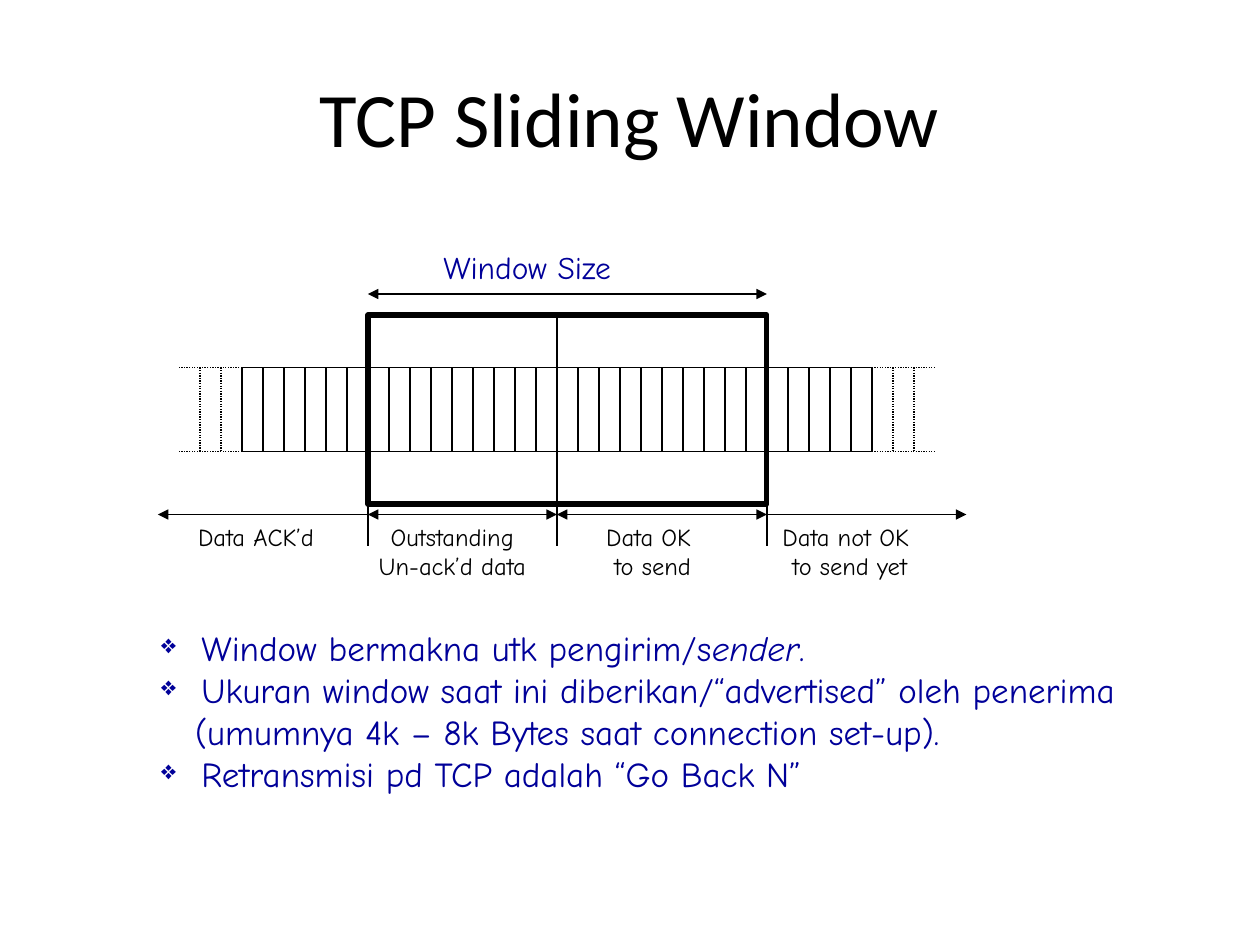
from lxml.etree import SubElement
from pptx import Presentation
from pptx.dml.color import RGBColor
from pptx.enum.dml import MSO_LINE
from pptx.enum.shapes import MSO_CONNECTOR, MSO_SHAPE
from pptx.enum.text import MSO_ANCHOR, MSO_AUTO_SIZE, PP_ALIGN
from pptx.oxml.ns import qn
from pptx.util import Inches, Pt

COLORS = {"black": "000000", "blue": "000099"}
CELL = 1 / 6
LEFT, TOP = 1.92, 2.5
CELLS = 30
WIN_START, WIN_SPLIT, WIN_END = 6, 15, 25
WIN_ROWS = 9
BAND = (2.5, 6.5)
ARROW_ROW = 9.5


def color(name):
    return RGBColor.from_string(COLORS[name])


def x(col):
    return Inches(LEFT + col * CELL)


def y(row):
    return Inches(TOP + row * CELL)


def add_line(s, start, end, dotted=False, head=False, tail=False):
    c = s.shapes.add_connector(MSO_CONNECTOR.STRAIGHT, x(start[0]), y(start[1]), x(end[0]), y(end[1]))
    c.line.color.rgb = color("black")
    c.line.width = Pt(0.75)
    if dotted:
        c.line.dash_style = MSO_LINE.ROUND_DOT
    ln = c.line._get_or_add_ln()
    for tag, wanted in (("a:headEnd", head), ("a:tailEnd", tail)):
        if wanted:
            SubElement(ln, qn(tag), type="triangle")
    SubElement(c._element.spPr, qn("a:effectLst"))


def set_bullet(p, indent, char=None):
    pPr = p._p.get_or_add_pPr()
    pPr.set("marL", str(Inches(indent)))
    if char:
        pPr.set("indent", str(-Inches(indent)))
        SubElement(pPr, qn("a:buSzPct"), val="75000")
        SubElement(pPr, qn("a:buChar"), char=char)


def add_text(s, box, paragraphs, size=14, font="Comic Neue", fill="black",
             align=PP_ALIGN.CENTER, anchor=MSO_ANCHOR.TOP, wrap=False):
    tf = s.shapes.add_textbox(*map(Inches, box)).text_frame
    tf.word_wrap = wrap
    tf.auto_size = MSO_AUTO_SIZE.NONE if wrap else MSO_AUTO_SIZE.SHAPE_TO_FIT_TEXT
    tf.vertical_anchor = anchor
    for i, runs in enumerate(paragraphs):
        p = tf.paragraphs[0] if i == 0 else tf.add_paragraph()
        p.alignment = align
        for text, italic in [(runs, False)] if isinstance(runs, str) else runs:
            r = p.add_run()
            r.text = text
            r.font.size = Pt(size)
            r.font.name = font
            r.font.italic = italic
            r.font.color.rgb = color(fill)
    return tf


def add_cells(s):
    top, bottom = BAND
    for row in BAND:
        add_line(s, (0, row), (CELLS, row))
        add_line(s, (CELLS, row), (CELLS + 3, row), dotted=True)
        add_line(s, (0, row), (-3, row), dotted=True)
    for col in range(-2, CELLS + 3):
        add_line(s, (col, top), (col, bottom), dotted=not 0 <= col <= CELLS)


def add_window(s):
    sp = s.shapes.add_shape(MSO_SHAPE.RECTANGLE, x(WIN_START), y(0),
                            x(WIN_END) - x(WIN_START), y(WIN_ROWS) - y(0))
    sp.shadow.inherit = False
    sp.fill.background()
    sp.line.color.rgb = color("black")
    sp.line.width = Pt(3)
    add_line(s, (WIN_SPLIT, 0), (WIN_SPLIT, WIN_ROWS))
    add_line(s, (WIN_START, -1), (WIN_END, -1), head=True, tail=True)


def add_ranges(s):
    for start, end, head in ((WIN_START, -4, False), (WIN_END, 34.5, False),
                             (WIN_START, WIN_SPLIT, True), (WIN_SPLIT, WIN_END, True)):
        add_line(s, (start, ARROW_ROW), (end, ARROW_ROW), head=head, tail=True)
    for col in (WIN_START, WIN_SPLIT, WIN_END):
        add_line(s, (col, WIN_ROWS), (col, WIN_ROWS + 2))
    for left, width, lines in (
        (1.43, 1.27, ["Data ACK’d "]),
        (2.87, 1.44, ["Outstanding", "Un-ack’d data"]),
        (4.67, 1.02, ["Data OK ", "to send"]),
        (6.06, 1.37, ["Data not OK ", "to send yet"]),
    ):
        add_text(s, (left, 4.09, width, 0.57), lines)


def add_notes_list(s):
    items = [
        [("Window bermakna utk pengirim/s", False), ("ender", True), (".", False)],
        "Ukuran window saat ini diberikan/“advertised” oleh penerima",
        "(umumnya 4k – 8k Bytes saat connection set-up).",
        "Retransmisi pd TCP adalah “Go Back N”",
    ]
    tf = add_text(s, (1.18, 4.92, 8.32, 1.5), items, size=20, fill="blue", align=PP_ALIGN.LEFT)
    for p in tf.paragraphs:
        if p.text.startswith("("):
            set_bullet(p, 0.27)
        else:
            set_bullet(p, 0.32, "❖")


def main():
    prs = Presentation()
    prs.slide_width, prs.slide_height = Inches(10), Inches(7.5)
    s = prs.slides.add_slide(prs.slide_layouts[6])
    add_text(s, (0.5, 0.3, 9, 1.25), ["TCP Sliding Window"], size=44, font="Calibri",
             anchor=MSO_ANCHOR.MIDDLE, wrap=True)
    add_cells(s)
    add_window(s)
    add_text(s, (3.42, 1.92, 2.2, 0.5), ["Window Size"], size=18, fill="blue", align=PP_ALIGN.LEFT)
    add_ranges(s)
    add_notes_list(s)
    prs.save("out.pptx")


if __name__ == "__main__":
    main()
